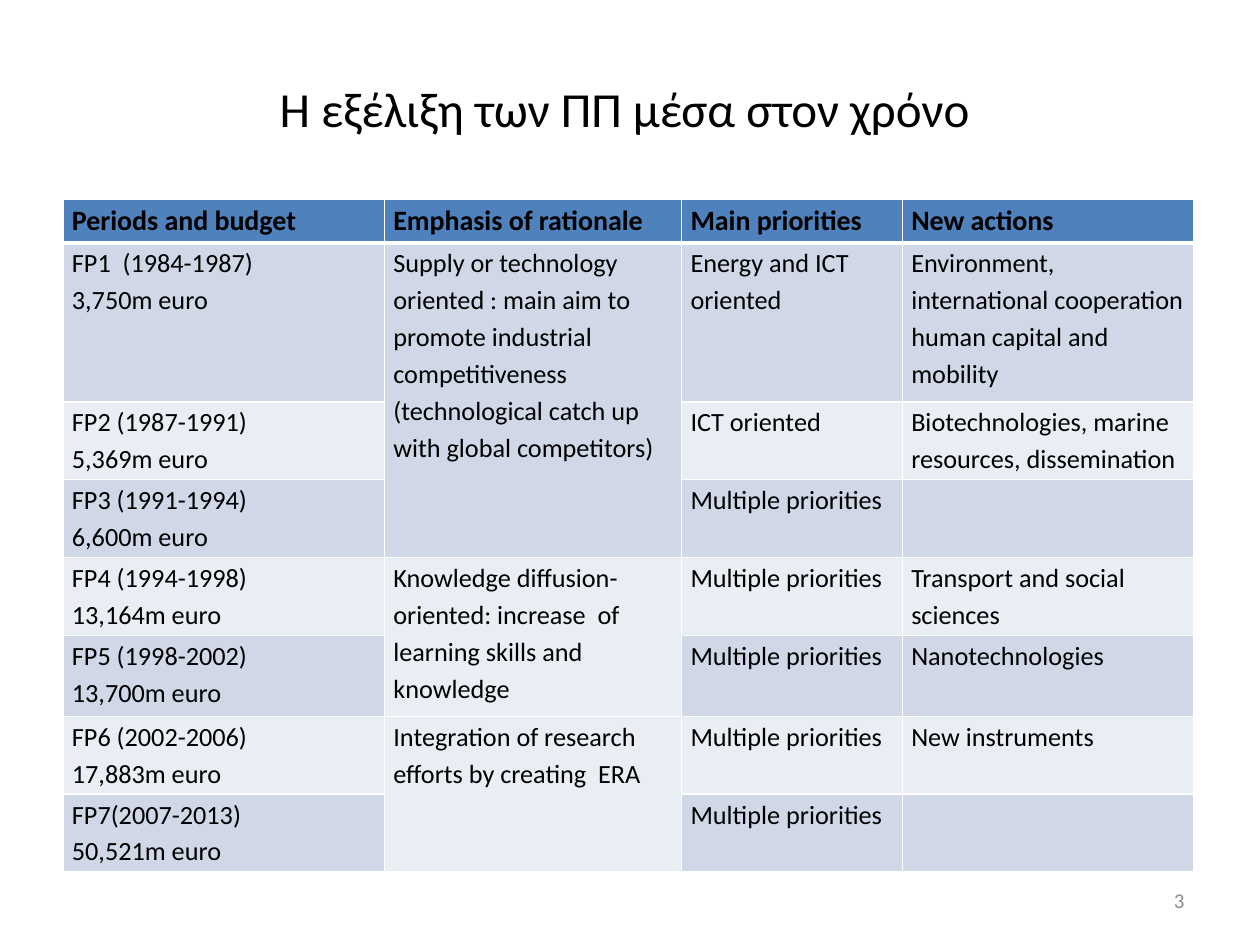
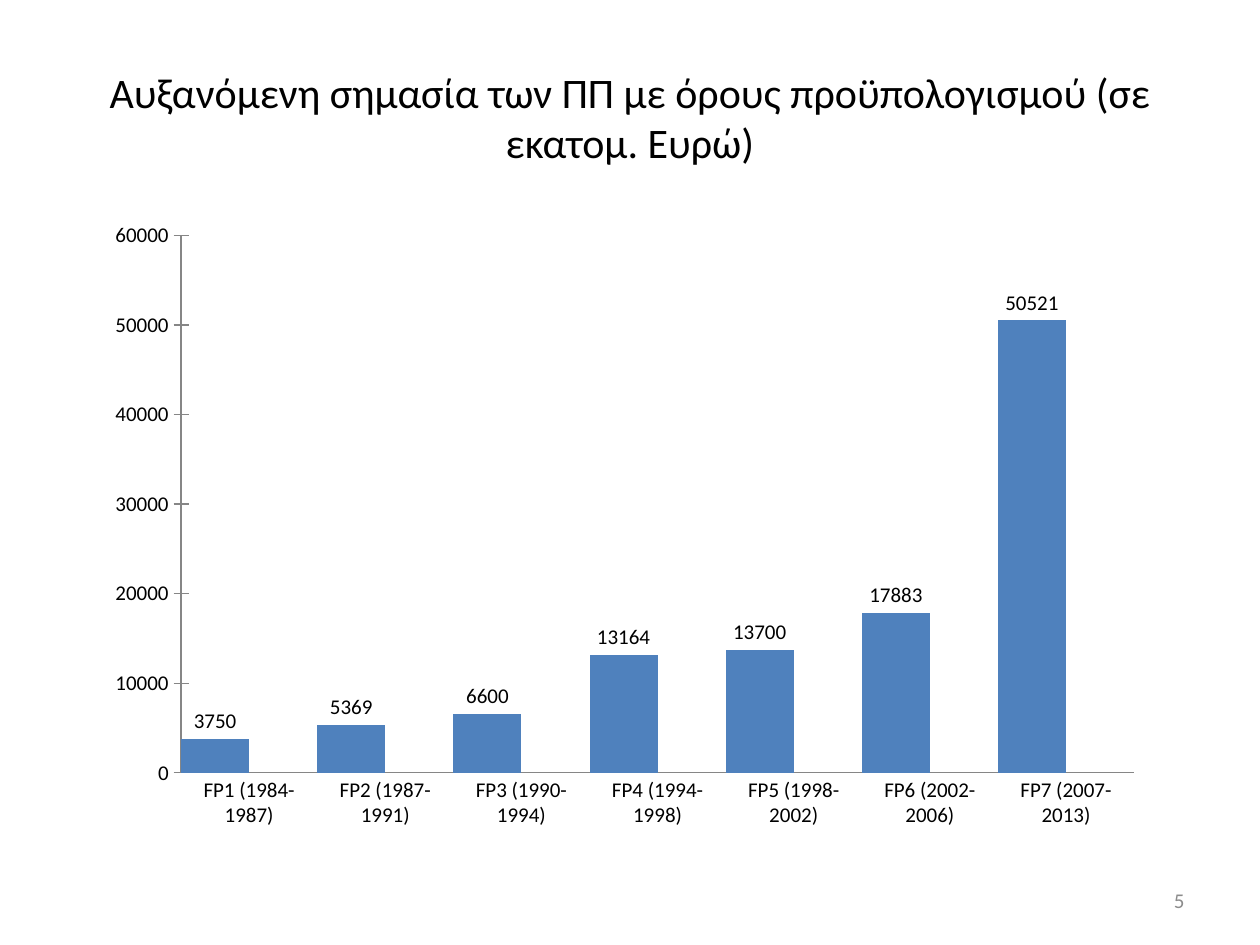
from lxml import etree
from pptx import Presentation
from pptx import util as u
from pptx.chart.data import CategoryChartData
from pptx.dml.color import RGBColor
from pptx.enum import chart as ch
from pptx.enum import text as t
from pptx.oxml.ns import qn

# Content
EVOLUTION_TITLE = "Η εξέλιξη των ΠΠ μέσα στον χρόνο "
BUDGET_TITLE = "Αυξανόμενη σημασία των ΠΠ με όρους προϋπολογισμού (σε εκατομ. Ευρώ)"
HEADERS = ["Periods and budget", "Emphasis of rationale", "Main priorities", "New actions"]
MULTIPLE = "Multiple priorities"
# Period and budget, main priorities, new actions
PROGRAMMES = [
    ("FP1  (1984-1987)\n3,750m euro", "Energy and ICT oriented",
     "Environment, international cooperation human capital and mobility"),
    ("FP2 (1987-1991)\n5,369m euro", "ICT oriented",
     "Biotechnologies, marine resources, dissemination"),
    ("FP3 (1991-1994)\n6,600m euro", MULTIPLE, ""),
    ("FP4 (1994-1998)\n13,164m euro", MULTIPLE, "Transport and social sciences"),
    ("FP5 (1998-2002)\n13,700m euro", MULTIPLE, "Nanotechnologies"),
    ("FP6 (2002-2006)\n17,883m euro", MULTIPLE, "New instruments"),
    ("FP7(2007-2013)\n50,521m euro", MULTIPLE, ""),
]
# First row, last row, emphasis shared by those rows
RATIONALES = [
    (1, 3, "Supply or technology oriented : main aim to promote industrial "
           "competitiveness  (technological catch up with global competitors)"),
    (4, 5, "Knowledge diffusion-oriented: increase  of learning skills and knowledge"),
    (6, 7, "Integration of research efforts by creating  ERA"),
]
BUDGETS = {
    "FP1 (1984-1987)": 3750,
    "FP2 (1987-1991)": 5369,
    "FP3 (1990-1994)": 6600,
    "FP4 (1994-1998)": 13164,
    "FP5 (1998-2002)": 13700,
    "FP6 (2002-2006)": 17883,
    "FP7 (2007-2013)": 50521,
}

# Shared style
FONT = "Calibri"
BLACK = RGBColor(0x00, 0x00, 0x00)
WHITE = RGBColor(0xFF, 0xFF, 0xFF)
GREY = RGBColor(0x8C, 0x8C, 0x8C)
AXIS_GREY = RGBColor(0x86, 0x86, 0x86)
BLUE = RGBColor(0x4F, 0x81, 0xBD)
RED = RGBColor(0xC0, 0x50, 0x4D)
BANDS = [RGBColor(0xE9, 0xED, 0xF4), RGBColor(0xD0, 0xD8, 0xE8)]
LEFT = u.Cm(1.27)
COLUMN_WIDTHS = [6.48, 5.99, 4.45, 5.87]
ROW_HEIGHTS = [0.89, 3.2, 1.57, 1.57, 1.57, 1.63, 1.57, 1.57]


def style_font(font, size, color=BLACK, bold=False):
    font.name = FONT
    font.size = u.Pt(size)
    font.bold = bold
    font.color.rgb = color


def write(frame, words, size, color=BLACK, bold=False, align=None, spacing=None):
    frame.text = words
    for para in frame.paragraphs:
        para.alignment = align
        para.line_spacing = spacing
        for span in para.runs:
            style_font(span.font, size, color, bold)


def add_page(deck, title, title_height, title_size, number):
    page = deck.slides.add_slide(deck.slide_layouts[5])
    heading = page.shapes.title
    heading.left, heading.top = LEFT, u.Cm(0.76)
    heading.width, heading.height = u.Cm(22.86), u.Cm(title_height)
    frame = heading.text_frame
    frame.auto_size = t.MSO_AUTO_SIZE.NONE
    frame.vertical_anchor = t.MSO_ANCHOR.MIDDLE
    write(frame, title, title_size, align=t.PP_ALIGN.CENTER)

    # Page number
    box = page.shapes.add_textbox(u.Cm(18.2), u.Cm(17.65), u.Cm(5.93), u.Cm(1.01))
    box.text_frame.word_wrap = True
    box.text_frame.vertical_anchor = t.MSO_ANCHOR.MIDDLE
    write(box.text_frame, number, 12, GREY, align=t.PP_ALIGN.RIGHT)
    return page


def draw_borders(cell, bottom_points):
    properties = cell._tc.get_or_add_tcPr()
    for side, points in (("L", 1), ("R", 1), ("T", 1), ("B", bottom_points)):
        line = etree.SubElement(properties, qn(f"a:ln{side}"), w=str(u.Pt(points)))
        fill = etree.SubElement(line, qn("a:solidFill"))
        etree.SubElement(fill, qn("a:srgbClr"), val=str(WHITE))


def add_programme_table(page):
    rows = [HEADERS] + [[period, "", priority, action]
                        for period, priority, action in PROGRAMMES]
    for first, last, rationale in RATIONALES:
        rows[first][1] = rationale
    table = page.shapes.add_table(len(rows), len(HEADERS), LEFT, u.Cm(4.01),
                                  u.Cm(sum(COLUMN_WIDTHS)), u.Cm(sum(ROW_HEIGHTS))).table
    table.horz_banding = False
    for column, width in zip(table.columns, COLUMN_WIDTHS):
        column.width = u.Cm(width)
    for r, (row, height) in enumerate(zip(rows, ROW_HEIGHTS)):
        table.rows[r].height = u.Cm(height)
        header = r == 0
        for c, words in enumerate(row):
            cell = table.cell(r, c)
            cell.margin_left = cell.margin_right = u.Cm(0.18)
            cell.margin_top = cell.margin_bottom = 0
            draw_borders(cell, 3 if header else 1)
            cell.fill.solid()
            cell.fill.fore_color.rgb = BLUE if header else BANDS[r % 2]
            write(cell.text_frame, words, 16 if header else 15, bold=header, spacing=1.15)
    for first, last, rationale in RATIONALES:
        table.cell(first, 1).merge(table.cell(last, 1))


def add_budget_chart(page):
    data = CategoryChartData()
    data.categories = list(BUDGETS)
    data.add_series("Series 1", list(BUDGETS.values()))
    data.add_series("Series 2", [None] * len(BUDGETS))
    chart = page.shapes.add_chart(ch.XL_CHART_TYPE.COLUMN_CLUSTERED, u.Cm(1.9), u.Cm(4.24),
                                  u.Cm(21.39), u.Cm(12.7), data).chart
    chart.has_legend = False
    chart.has_title = False
    style_font(chart.font, 10)

    # Columns and their values
    plot = chart.plots[0]
    plot.vary_by_categories = False
    plot.gap_width = 0
    plot.overlap = 0
    for series, color in zip(plot.series, (BLUE, RED)):
        series.format.fill.solid()
        series.format.fill.fore_color.rgb = color
        series.invert_if_negative = False
    labels = plot.series[0].data_labels
    labels.show_value = True
    labels.position = ch.XL_LABEL_POSITION.OUTSIDE_END
    style_font(labels.font, 12)

    # Axes
    for axis, tick in ((chart.category_axis, ch.XL_TICK_MARK.NONE),
                       (chart.value_axis, ch.XL_TICK_MARK.CROSS)):
        axis.has_major_gridlines = False
        axis.major_tick_mark = tick
        axis.minor_tick_mark = ch.XL_TICK_MARK.NONE
        axis.format.line.color.rgb = AXIS_GREY
        axis.format.line.width = u.Pt(0.75)
        style_font(axis.tick_labels.font, 12)
    chart.value_axis.minimum_scale = 0
    chart.value_axis.maximum_scale = 60000
    chart.value_axis.major_unit = 10000


def main():
    deck = Presentation()
    deck.slide_width, deck.slide_height = u.Cm(25.4), u.Cm(19.05)
    add_programme_table(add_page(deck, EVOLUTION_TITLE, 2.84, 28, "3"))
    add_budget_chart(add_page(deck, BUDGET_TITLE, 3.18, 24, "5"))
    deck.save("out.pptx")


if __name__ == "__main__":
    main()
